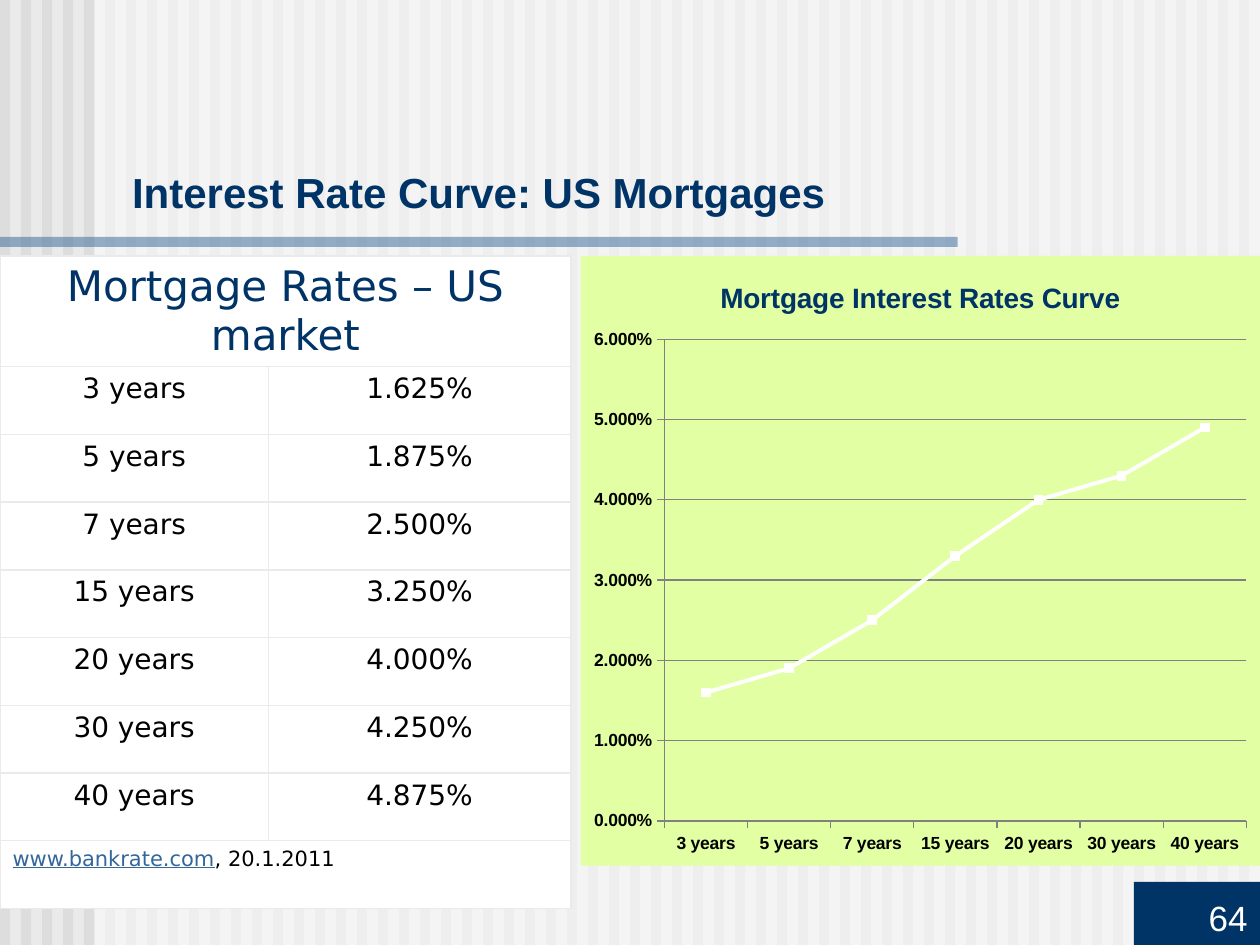
import pptx
import pptx.chart.data
import pptx.dml.color
import pptx.enum.chart
import pptx.enum.shapes
import pptx.enum.text
import pptx.oxml
import pptx.oxml.ns
import pptx.util
from lxml import etree

Inches, Pt = pptx.util.Inches, pptx.util.Pt
ALIGN = pptx.enum.text.PP_ALIGN
ANCHOR = pptx.enum.text.MSO_ANCHOR

TITLE = "Interest Rate Curve: US Mortgages"
TABLE_TITLE = "Mortgage Rates – US market"
CHART_TITLE = "Mortgage Interest Rates Curve"
PAGE = "64"
# term, rate in the table, value on the curve
RATES = [
    ("3 years", "1.625%", 0.016),
    ("5 years", "1.875%", 0.019),
    ("7 years", "2.500%", 0.025),
    ("15 years", "3.250%", 0.033),
    ("20 years", "4.000%", 0.04),
    ("30 years", "4.250%", 0.043),
    ("40 years", "4.875%", 0.049),
]
SOURCE = ("www.bankrate.com", ", 20.1.2011")

THEME = {
    "bg": "EAEAEA", "stripe": "DDDDDD", "white": "FFFFFF", "navy": "003366",
    "blue": "336699", "black": "000000", "lime": "E3FFA3", "grid": "808080",
    "sans": "Arial", "table": "DejaVu Sans",
    "title": 24, "chart_title": 16, "cell": 16, "source": 12, "axis": 10, "page": 20,
}
STRIPES, STRIPE_W = 60, 0.08
COLS, TABLE_H = (2.13, 2.4), 4.84
PLOT = {"x": 0.123, "y": 0.137, "w": 0.857, "h": 0.79}


def color(name):
    return pptx.dml.color.RGBColor.from_string(THEME[name])


def paint(fill, name, alpha=None):
    fill.solid()
    fill.fore_color.rgb = color(name)
    if alpha is not None:
        clr = fill._xPr.find(".//" + pptx.oxml.ns.qn("a:srgbClr"))
        etree.SubElement(clr, pptx.oxml.ns.qn("a:alpha")).set("val", str(alpha * 1000))


def set_font(font, size, ink, face="sans", bold=False, underline=None):
    font.size, font.name = Pt(THEME[size]), THEME[face]
    font.bold, font.underline = bold, underline
    font.color.rgb = color(ink)


def write(tf, text, size, ink, align=ALIGN.LEFT, **fmt):
    """Append a formatted run to the first paragraph of a text frame."""
    tf.word_wrap = True
    p = tf.paragraphs[0]
    p.alignment = align
    r = p.add_run()
    r.text = text
    set_font(r.font, size, ink, **fmt)


def add_rect(shapes, x, y, w, h, fill, alpha=None):
    sp = shapes.add_shape(pptx.enum.shapes.MSO_SHAPE.RECTANGLE,
                          Inches(x), Inches(y), Inches(w), Inches(h))
    sp.shadow.inherit = False
    sp.line.fill.background()
    paint(sp.fill, fill, alpha)
    return sp


def set_borders(cell):
    tc_pr = cell._tc.get_or_add_tcPr()
    for i, side in enumerate(("lnL", "lnR", "lnT", "lnB")):
        tc_pr.insert(i, pptx.oxml.parse_xml(
            f'<a:{side} {pptx.oxml.ns.nsdecls("a")} w="{Pt(1)}"><a:solidFill>'
            f'<a:srgbClr val="{THEME["bg"]}"/></a:solidFill></a:{side}>'))


def add_backdrop(s):
    paint(s.background.fill, "bg")
    shapes = s.shapes.add_group_shape().shapes
    for i in range(STRIPES):
        add_rect(shapes, i * 10 / STRIPES, 0, STRIPE_W, 7.5, "stripe")
    add_rect(shapes, 0.75, 0, 9.25, 7.5, "white", 50)
    add_rect(shapes, 0, 1.88, 7.6, 0.08, "blue", 50)


def add_rate_table(s):
    n_rows = len(RATES) + 2
    tbl = s.shapes.add_table(n_rows, len(COLS), Inches(0), Inches(2.03),
                             Inches(sum(COLS)), Inches(TABLE_H)).table
    tbl.first_row = tbl.horz_banding = False
    for col, w in zip(tbl.columns, COLS):
        col.width = Inches(w)
    for cell in tbl.iter_cells():
        paint(cell.fill, "white")
        set_borders(cell)
    for i in (0, n_rows - 1):
        tbl.cell(i, 0).merge(tbl.cell(i, 1))

    header = tbl.cell(0, 0)
    header.margin_bottom = Inches(0.03)
    write(header.text_frame, TABLE_TITLE, "title", "navy",
          align=ALIGN.CENTER, face="table")
    for i, (term, rate, _) in enumerate(RATES, 1):
        for j, text in enumerate((term, rate)):
            write(tbl.cell(i, j).text_frame, text, "cell", "black",
                  align=ALIGN.CENTER, face="table")
    tf = tbl.cell(n_rows - 1, 0).text_frame
    write(tf, SOURCE[0], "source", "blue", face="table", underline=True)
    write(tf, SOURCE[1], "source", "black", face="table")


def add_rate_chart(s):
    data = pptx.chart.data.CategoryChartData(number_format="0.000%")
    data.categories = [term for term, _, _ in RATES]
    data.add_series("Series 1", [value for _, _, value in RATES])
    chart = s.shapes.add_chart(pptx.enum.chart.XL_CHART_TYPE.LINE_MARKERS,
                               Inches(4.61), Inches(2.03), Inches(5.39), Inches(4.84),
                               data).chart
    set_font(chart.font, "axis", "black")
    chart.has_legend = False
    chart.has_title = True
    write(chart.chart_title.text_frame, CHART_TITLE, "chart_title", "navy",
          align=ALIGN.CENTER, bold=True)
    chart.chart_title.include_in_layout = False

    for axis in (chart.category_axis, chart.value_axis):
        set_font(axis.tick_labels.font, "axis", "black", bold=True)
        axis.major_tick_mark = pptx.enum.chart.XL_TICK_MARK.OUTSIDE
        axis.format.line.color.rgb = color("grid")
    axis = chart.value_axis
    axis.minimum_scale, axis.maximum_scale, axis.major_unit = 0, 0.06, 0.01
    axis.tick_labels.number_format = "0.000%"
    axis.tick_labels.number_format_is_linked = False
    axis.has_major_gridlines = True
    axis.major_gridlines.format.line.color.rgb = color("grid")

    plot = chart.plots[0]
    plot.vary_by_categories = False
    series = plot.series[0]
    series.smooth = False
    series.format.line.color.rgb = color("white")
    series.format.line.width = Pt(2.25)
    series.marker.style = pptx.enum.chart.XL_MARKER_STYLE.SQUARE
    series.marker.size = 5
    paint(series.marker.format.fill, "white")
    series.marker.format.line.color.rgb = color("white")

    ns = pptx.oxml.ns.nsdecls("c", "a")
    area = chart._chartSpace.chart.plotArea
    for old in area.findall(pptx.oxml.ns.qn("c:layout")):
        area.remove(old)
    sizes = "".join(f'<c:{k} val="{v}"/>' for k, v in PLOT.items())
    area.insert(0, pptx.oxml.parse_xml(
        f'<c:layout {ns}><c:manualLayout><c:layoutTarget val="inner"/>'
        f'<c:xMode val="edge"/><c:yMode val="edge"/>{sizes}</c:manualLayout></c:layout>'))
    chart._chartSpace.chart.addnext(pptx.oxml.parse_xml(
        f'<c:spPr {ns}><a:solidFill><a:srgbClr val="{THEME["lime"]}"/></a:solidFill>'
        f'<a:ln><a:noFill/></a:ln></c:spPr>'))


def main():
    prs = pptx.Presentation()
    prs.slide_width, prs.slide_height = Inches(10), Inches(7.5)
    s = prs.slides.add_slide(prs.slide_layouts[6])
    add_backdrop(s)
    tf = s.shapes.add_textbox(Inches(0.95), Inches(0.94), Inches(8.93),
                              Inches(0.83)).text_frame
    tf.vertical_anchor = ANCHOR.BOTTOM
    write(tf, TITLE, "title", "navy", bold=True)
    add_rate_table(s)
    add_rate_chart(s)
    tf = add_rect(s.shapes, 9, 7, 1, 0.5, "navy").text_frame
    tf.vertical_anchor = ANCHOR.BOTTOM
    write(tf, PAGE, "page", "white", align=ALIGN.RIGHT)
    prs.save("out.pptx")


if __name__ == "__main__":
    main()
